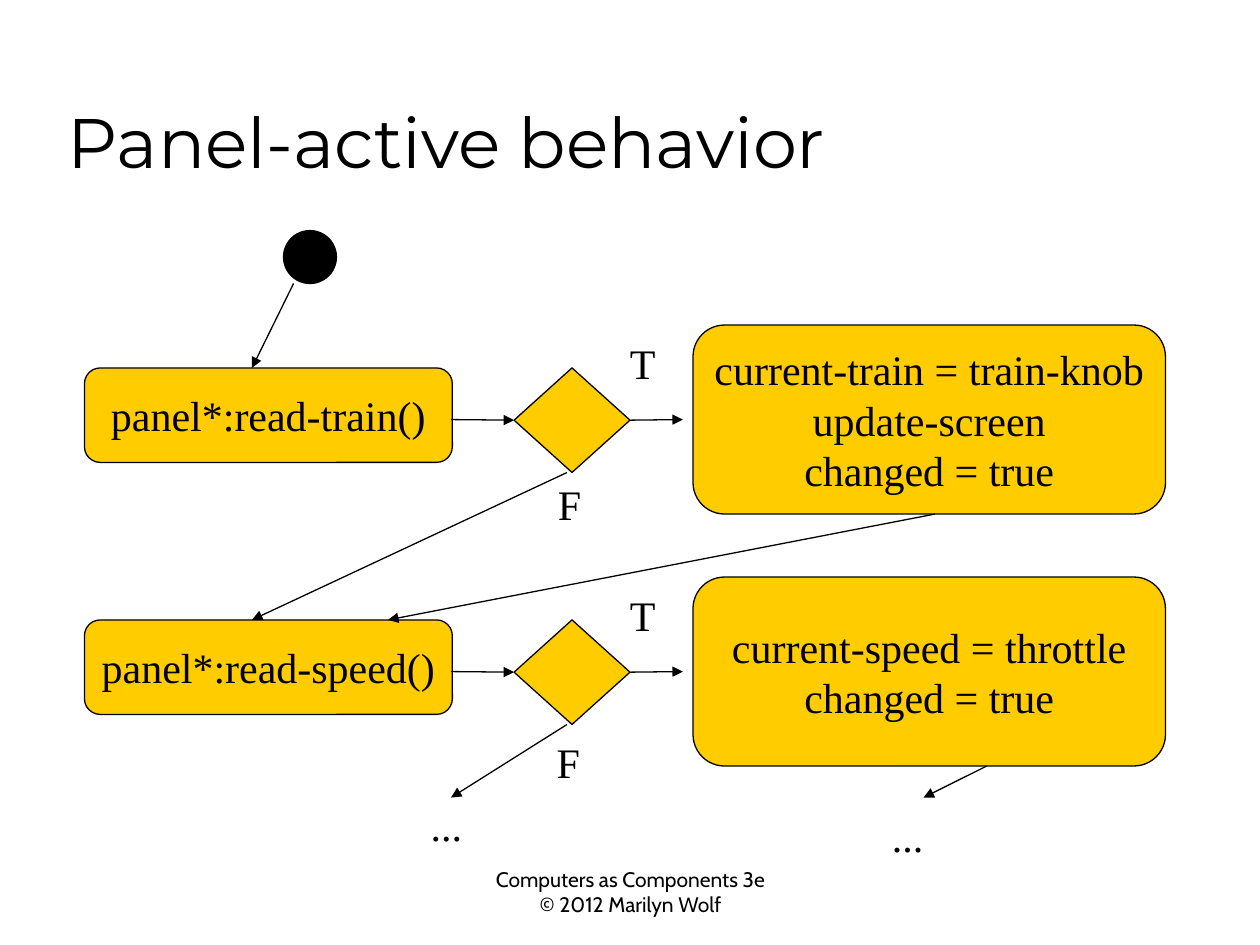
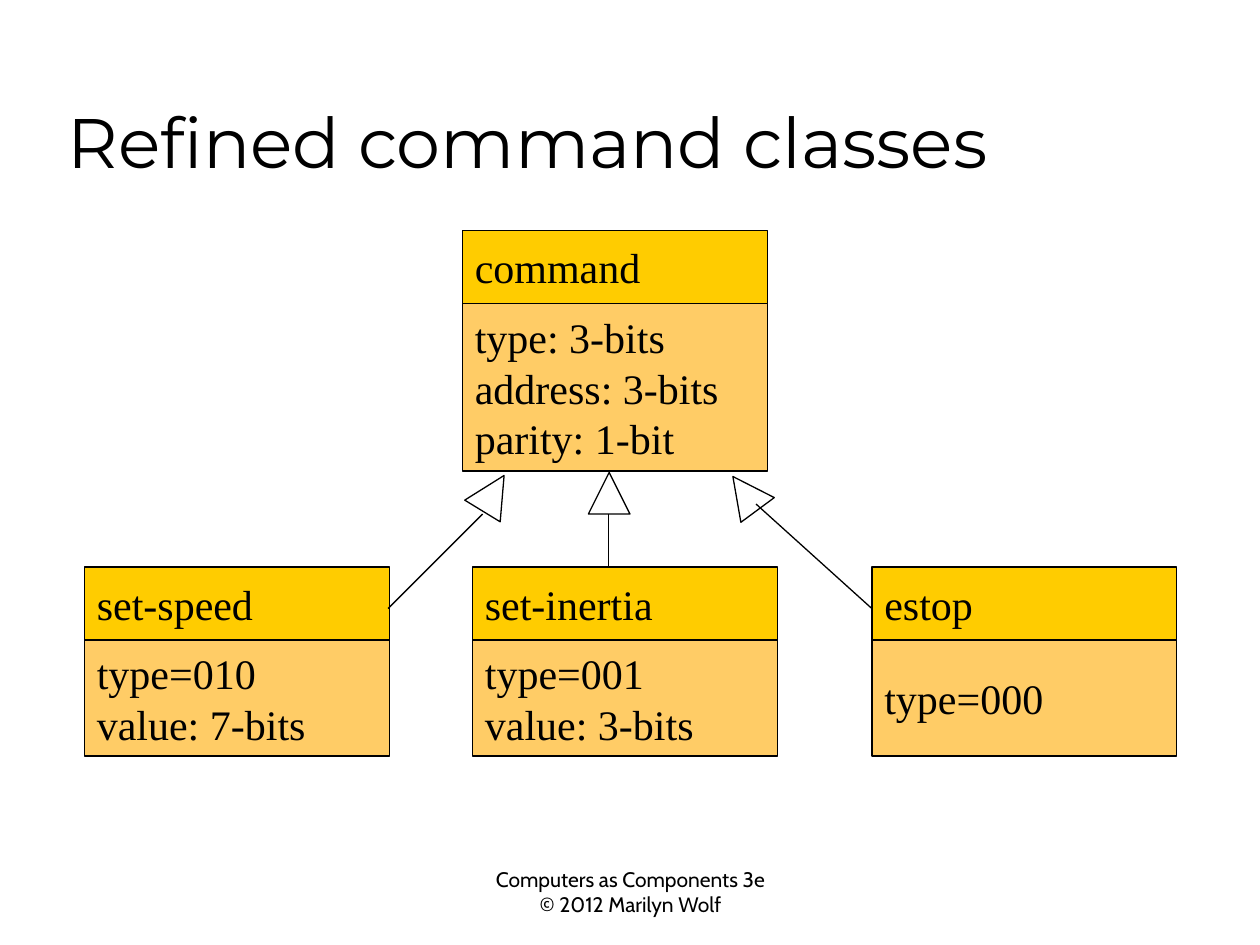
from lxml.etree import SubElement
from pptx import Presentation
from pptx.dml.color import RGBColor
from pptx.enum.shapes import MSO_CONNECTOR, MSO_SHAPE as SHAPE
from pptx.enum.text import MSO_ANCHOR as ANCHOR, PP_ALIGN as ALIGN
from pptx.oxml.ns import qn
from pptx.util import Inches, Pt

BLACK = RGBColor(0x00, 0x00, 0x00)
WHITE = RGBColor(0xFF, 0xFF, 0xFF)
GOLD = RGBColor(0xFF, 0xCC, 0x00)
PEACH = RGBColor(0xFF, 0xCC, 0x66)

BODY_FONT = "Times New Roman"
TITLE_FONT = "Montserrat"
FOOTER_FONT = "Cabin"
LINE_WIDTH = Pt(0.75)

CLASS_WIDTH = 2.42
HEAD_HEIGHT = 0.58
ROW_PITCH = 2


def write(sp, text, size=24, font=BODY_FONT, align=ALIGN.LEFT,
          anchor=ANCHOR.TOP, wrap=False):
    tf = sp.text_frame
    tf.word_wrap = wrap
    tf.vertical_anchor = anchor
    for i, line in enumerate(text.split("\n")):
        p = tf.add_paragraph() if i else tf.paragraphs[0]
        p.alignment = align
        r = p.add_run()
        r.text = line
        r.font.size = Pt(size)
        r.font.name = font
        r.font.color.rgb = BLACK


def add_text(slide, text, left, top, width, height=0.5, **fmt):
    sp = slide.shapes.add_textbox(Inches(left), Inches(top),
                                  Inches(width), Inches(height))
    write(sp, text, **fmt)


def add_box(slide, kind, left, top, width, height, fill, text=None, **fmt):
    sp = slide.shapes.add_shape(kind, Inches(left), Inches(top),
                                Inches(width), Inches(height))
    sp.shadow.inherit = False
    sp.fill.solid()
    sp.fill.fore_color.rgb = fill
    sp.line.color.rgb = BLACK
    sp.line.width = LINE_WIDTH
    if text:
        write(sp, text, anchor=ANCHOR.MIDDLE, **fmt)
    return sp


def add_line(slide, start, end, arrow=False):
    points = [Inches(v) for v in (*start, *end)]
    line = slide.shapes.add_connector(MSO_CONNECTOR.STRAIGHT, *points)
    line.line.color.rgb = BLACK
    line.line.width = LINE_WIDTH
    if arrow:
        SubElement(line.line._ln, qn("a:tailEnd"), type="triangle")
    SubElement(line._element.spPr, qn("a:effectLst"))
    return line


def add_slide(prs, title):
    slide = prs.slides.add_slide(prs.slide_layouts[6])
    add_text(slide, "Computers as Components 3e\n© 2012 Marilyn Wolf",
             3.67, 6.83, 2.67, size=12, font=FOOTER_FONT,
             align=ALIGN.CENTER, wrap=True)
    add_text(slide, title, 0.44, 0.25, 8.5, 1.25, size=40, font=TITLE_FONT,
             anchor=ANCHOR.BOTTOM, wrap=True)
    return slide


def add_state(slide, text, left, top, width, height):
    sp = add_box(slide, SHAPE.ROUNDED_RECTANGLE, left, top, width, height,
                 GOLD, text, align=ALIGN.CENTER)
    sp.adjustments[0] = 0.167


def add_decision_row(slide, top, reading, action):
    middle = top + 0.41
    add_state(slide, reading, 0.67, top, 2.92, 0.75)
    add_state(slide, action, 5.5, top - 0.34, 3.75, 1.5)
    decision = add_box(slide, SHAPE.DIAMOND, 4.08, top, 0.92, 0.83, GOLD)
    add_line(slide, (3.58, middle), (4.08, middle), True).end_connect(decision, 1)
    add_line(slide, (5, middle), (5.42, middle), True).begin_connect(decision, 3)
    add_text(slide, "T", 4.9, top - 0.29, 0.4)


def add_class(slide, name, attributes, left, top, body_height):
    add_box(slide, SHAPE.RECTANGLE, left, top, CLASS_WIDTH, HEAD_HEIGHT,
            GOLD, name)
    add_box(slide, SHAPE.RECTANGLE, left, top + HEAD_HEIGHT, CLASS_WIDTH,
            body_height, PEACH, attributes)


def build_panel_behavior(prs):
    slide = add_slide(prs, "Panel-active behavior")
    add_box(slide, SHAPE.OVAL, 2.25, 1.83, 0.42, 0.42, BLACK)
    rows = [
        ("panel*:read-train()",
         "current-train = train-knob\nupdate-screen\nchanged = true"),
        ("panel*:read-speed()", "current-speed = throttle\nchanged = true"),
    ]
    for i, (reading, action) in enumerate(rows):
        add_decision_row(slide, 2.92 + i * ROW_PITCH, reading, action)

    arrows = [
        ((2.33, 2.25), (2, 2.92)),
        ((4.5, 3.75), (2, 4.92)),
        ((4.5, 5.75), (3.58, 6.33)),
        ((7.42, 4.08), (3.08, 4.92)),
        ((7.83, 6.08), (7.33, 6.33)),
    ]
    for start, end in arrows:
        add_line(slide, start, end, arrow=True)

    labels = [("F", 4.33, 3.75, 0.39), ("F", 4.32, 5.8, 0.39),
              ("...", 3.32, 6.3, 0.45), ("...", 6.98, 6.38, 0.45)]
    for text, left, top, width in labels:
        add_text(slide, text, left, top, width)


def build_command_classes(prs):
    slide = add_slide(prs, "Refined command classes")
    add_class(slide, "command", "type: 3-bits\naddress: 3-bits\nparity: 1-bit",
              3.67, 1.83, 1.33)
    subclasses = [
        ("set-speed", "type=010\nvalue: 7-bits", 0.67),
        ("set-inertia", "type=001\nvalue: 3-bits", 3.75),
        ("estop", "type=000", 6.92),
    ]
    for name, attributes, left in subclasses:
        add_class(slide, name, attributes, left, 4.5, 0.92)

    inheritance = [
        (3.75, 31.4, (3.83, 4.08), (3.08, 4.83)),
        (4.67, 0, (4.83, 4.08), (4.83, 4.5)),
        (5.75, 323.5, (6, 4), (6.92, 4.83)),
    ]
    for left, rotation, start, end in inheritance:
        head = add_box(slide, SHAPE.ISOSCELES_TRIANGLE, left, 3.75,
                       0.33, 0.33, WHITE)
        head.rotation = rotation
        add_line(slide, start, end)


def main():
    prs = Presentation()
    prs.slide_width = Inches(10)
    prs.slide_height = Inches(7.5)
    build_panel_behavior(prs)
    build_command_classes(prs)
    prs.save("out.pptx")


if __name__ == "__main__":
    main()
